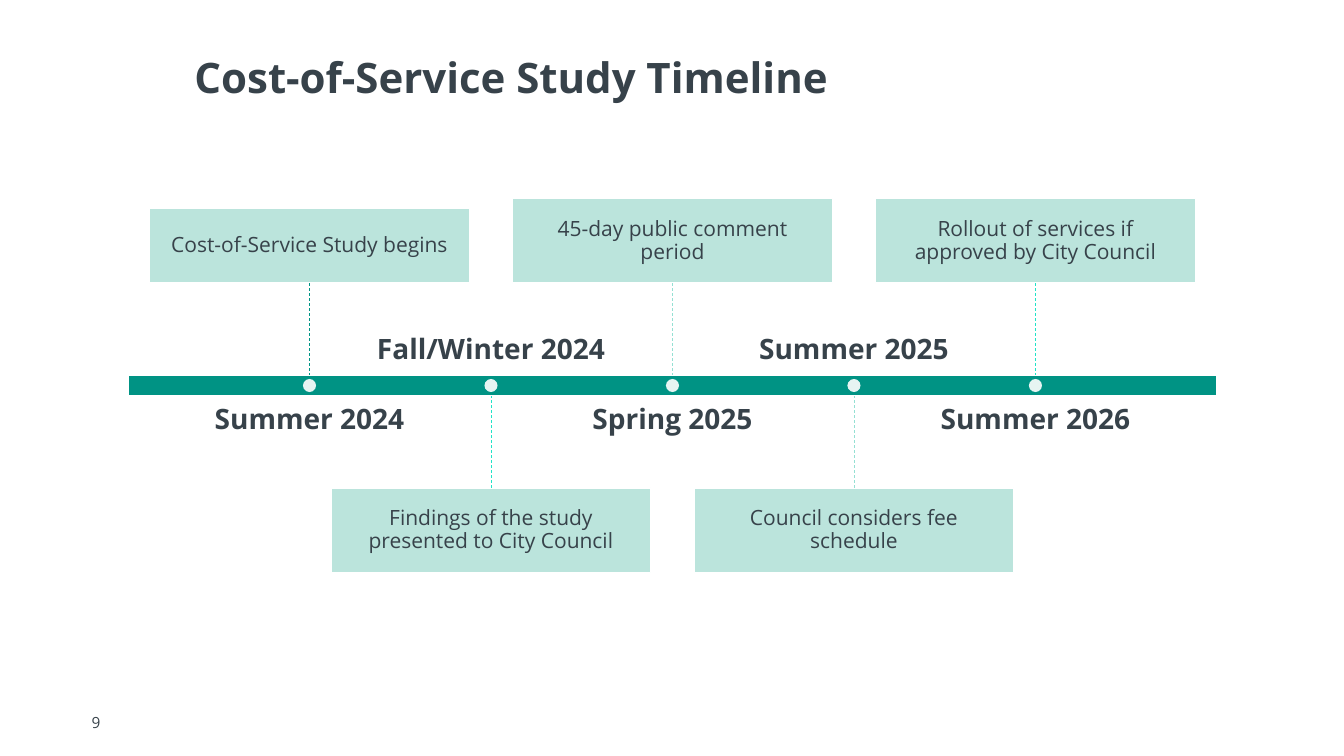
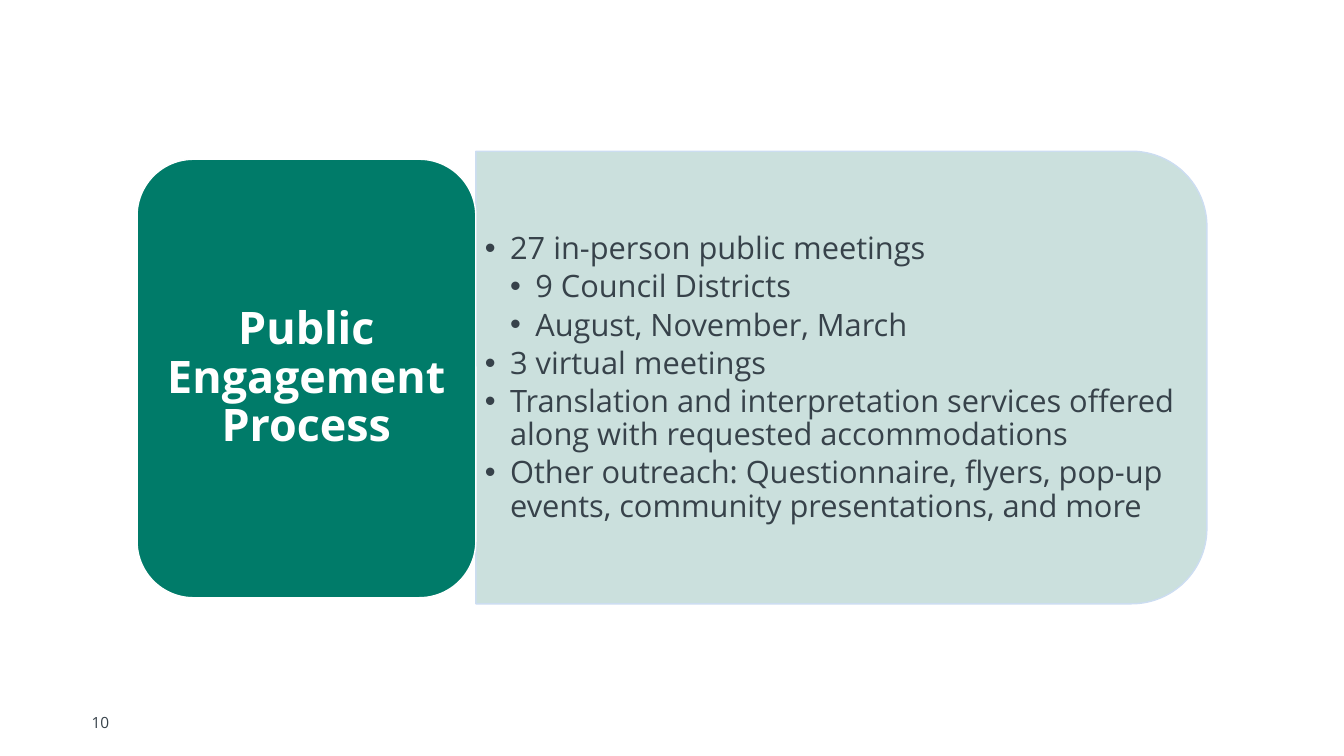
from dataclasses import dataclass
from typing import Any, Optional

from lxml import etree
from pptx import Presentation
from pptx.dml.color import RGBColor
from pptx.enum.dml import MSO_LINE
from pptx.enum.shapes import MSO_CONNECTOR, MSO_SHAPE
from pptx.enum.text import MSO_ANCHOR, PP_ALIGN
from pptx.oxml.ns import qn
from pptx.util import Inches, Pt

LEFT, CENTER = PP_ALIGN.LEFT, PP_ALIGN.CENTER
TOP, MIDDLE, BOTTOM = MSO_ANCHOR.TOP, MSO_ANCHOR.MIDDLE, MSO_ANCHOR.BOTTOM
RECTANGLE, OVAL = MSO_SHAPE.RECTANGLE, MSO_SHAPE.OVAL
ROUNDED, ROUND_TOP = MSO_SHAPE.ROUNDED_RECTANGLE, MSO_SHAPE.ROUND_2_SAME_RECTANGLE
STRAIGHT, DASH = MSO_CONNECTOR.STRAIGHT, MSO_LINE.DASH
TOP_SIDE, BOTTOM_SIDE = 0, 2


@dataclass(frozen=True)
class Theme:
    font: str = "Open Sans"
    ink: str = "37424A"
    white: str = "FFFFFF"
    bar: str = "009384"
    card: str = "B4E2D9"
    aqua: str = "21E3C7"
    pale_aqua: str = "95E0D3"
    heading: str = "007B69"
    panel: str = "CBE0DD"
    panel_edge: str = "CCDDF1"
    title_size: float = 30
    heading_size: float = 32
    bullet_size: float = 22
    date_size: float = 20
    card_size: float = 15
    number_size: float = 11
    line_spacing: float = 0.9
    opacity: int = 90


THEME = Theme()


@dataclass(frozen=True)
class Area:
    left: float
    top: float
    width: float
    height: float


@dataclass(frozen=True)
class TextStyle:
    size: float
    color: str = THEME.ink
    bold: bool = False
    align: PP_ALIGN = CENTER
    anchor: MSO_ANCHOR = MIDDLE
    inset_x: float = 0.1
    inset_y: float = 0.05
    space_after: float = 0
    line_spacing: float = THEME.line_spacing


@dataclass(frozen=True)
class Line:
    text: str
    bullet_level: Optional[int] = None


@dataclass(frozen=True)
class Milestone:
    date: str
    event: str
    stem_color: str
    card_height: float = 0.84


TITLE = TextStyle(THEME.title_size, bold=True, align=LEFT)
NUMBER = TextStyle(THEME.number_size, align=LEFT, line_spacing=1)
DATE_ABOVE = TextStyle(THEME.date_size, bold=True, anchor=BOTTOM, inset_x=0, inset_y=0)
DATE_BELOW = TextStyle(THEME.date_size, bold=True, anchor=TOP, inset_x=0, inset_y=0)
CARD = TextStyle(THEME.card_size, inset_x=0.16, inset_y=0.16)
HEADING = TextStyle(THEME.heading_size, THEME.white, bold=True, inset_x=0.12, inset_y=0.07)
BULLETS = TextStyle(THEME.bullet_size, align=LEFT, inset_x=0.09, space_after=3.5)

MILESTONES = [
    Milestone("Summer 2024", "Cost-of-Service Study begins", THEME.bar, 0.74),
    Milestone("Fall/Winter 2024", "Findings of the study presented to City Council", THEME.aqua),
    Milestone("Spring 2025", "45-day public comment period", THEME.pale_aqua),
    Milestone("Summer 2025", "Council considers fee schedule", THEME.pale_aqua),
    Milestone("Summer 2026", "Rollout of services if approved by City Council", THEME.aqua),
]
ENGAGEMENT = [
    Line("27 in-person public meetings", 0),
    Line("9 Council Districts", 1),
    Line("August, November, March", 1),
    Line("3 virtual meetings", 0),
    Line("Translation and interpretation services offered along with requested accommodations", 0),
    Line("Other outreach: Questionnaire, flyers, pop-up events, community presentations, and more", 0),
]

BAR = Area(1.27, 3.72, 10.8, 0.21)
FIRST_CENTER, STEP = 3.07, 1.8
CARD_WIDTH, UPPER_CARD_BOTTOM, LOWER_CARD_TOP = 3.17, 2.81, 4.84
DATE_WIDTH, DATE_HEIGHT, DATE_GAP = 2.88, 0.6, 0.09
DOT = 0.13
BULLET_INDENT = 0.25


def set_values(target: Any, values: dict[str, Any]) -> None:
    for name, value in values.items():
        setattr(target, name, value)


def placed(area: Area) -> list[int]:
    return [Inches(n) for n in (area.left, area.top, area.width, area.height)]


def add_bullet(para: Any, level: int) -> None:
    para.level = level
    properties = para._p.get_or_add_pPr()
    properties.set("marL", str(Inches(BULLET_INDENT * (level + 1))))
    properties.set("indent", str(-Inches(BULLET_INDENT)))
    font = etree.SubElement(properties, qn("a:buFont"))
    font.set("typeface", "Arial")
    etree.SubElement(properties, qn("a:buChar")).set("char", "•")


def write_text(shape: Any, lines: list[Line], style: TextStyle) -> None:
    frame = shape.text_frame
    set_values(frame, {
        "word_wrap": True,
        "vertical_anchor": style.anchor,
        "margin_left": Inches(style.inset_x),
        "margin_right": Inches(style.inset_x),
        "margin_top": Inches(style.inset_y),
        "margin_bottom": Inches(style.inset_y),
    })
    for index, line in enumerate(lines):
        para = frame.add_paragraph() if index else frame.paragraphs[0]
        if line.bullet_level is not None:
            add_bullet(para, line.bullet_level)
        set_values(para, {
            "alignment": style.align,
            "line_spacing": style.line_spacing,
            "space_before": Pt(0),
            "space_after": Pt(style.space_after),
        })
        span = para.add_run()
        span.text = line.text
        set_values(span.font, {"name": THEME.font, "size": Pt(style.size), "bold": style.bold})
        span.font.color.rgb = RGBColor.from_string(style.color)


def add_text(page: Any, area: Area, lines: list[Line], style: TextStyle) -> None:
    write_text(page.shapes.add_textbox(*placed(area)), lines, style)


def add_block(page: Any, kind: MSO_SHAPE, area: Area, fill: str,
              edge: Optional[str] = THEME.white, opacity: int = 100) -> Any:
    shape = page.shapes.add_shape(kind, *placed(area))
    shape.shadow.inherit = False
    shape.fill.solid()
    shape.fill.fore_color.rgb = RGBColor.from_string(fill)
    if opacity < 100:
        color = shape.element.spPr.find(f"{qn('a:solidFill')}/{qn('a:srgbClr')}")
        etree.SubElement(color, qn("a:alpha")).set("val", str(opacity * 1000))
    if edge is None:
        shape.line.fill.background()
    else:
        shape.line.color.rgb = RGBColor.from_string(edge)
        shape.line.width = Pt(1)
    return shape


def add_stem(page: Any, card: Any, side: int, x: float, bar_y: float, color: str) -> Any:
    """Draw a dashed line from a side of the card to the bar."""
    card_y = card.top + (card.height if side == BOTTOM_SIDE else 0)
    stem = page.shapes.add_connector(STRAIGHT, Inches(x), card_y, Inches(x), Inches(bar_y))
    stem.begin_connect(card, side)
    stem.line.color.rgb = RGBColor.from_string(color)
    set_values(stem.line, {"width": Pt(0.5), "dash_style": DASH})
    etree.SubElement(stem.element.spPr, qn("a:effectLst"))
    return stem


def add_milestone(page: Any, bar: Any, item: Milestone, index: int) -> None:
    x = FIRST_CENTER + STEP * index
    bar_bottom = BAR.top + BAR.height
    upper = index % 2 == 0
    if upper:
        card_top, side, bar_y = UPPER_CARD_BOTTOM - item.card_height, BOTTOM_SIDE, BAR.top
        date_top, date_style = bar_bottom + DATE_GAP, DATE_BELOW
    else:
        card_top, side, bar_y = LOWER_CARD_TOP, TOP_SIDE, bar_bottom
        date_top, date_style = BAR.top - DATE_GAP - DATE_HEIGHT, DATE_ABOVE

    card_area = Area(x - CARD_WIDTH / 2, card_top, CARD_WIDTH, item.card_height)
    card = add_block(page, RECTANGLE, card_area, THEME.card, opacity=THEME.opacity)
    write_text(card, [Line(item.event)], CARD)
    stem = add_stem(page, card, side, x, bar_y, item.stem_color)
    if index == len(MILESTONES) // 2:
        stem.end_connect(bar, TOP_SIDE)

    date_area = Area(x - DATE_WIDTH / 2, date_top, DATE_WIDTH, DATE_HEIGHT)
    add_text(page, date_area, [Line(item.date)], date_style)
    dot_area = Area(x - DOT / 2, BAR.top + (BAR.height - DOT) / 2, DOT, DOT)
    add_block(page, OVAL, dot_area, THEME.white, edge=None, opacity=THEME.opacity)


def add_page(deck: Any, number: int) -> Any:
    page = deck.slides.add_slide(deck.slide_layouts[6])
    add_text(page, Area(0.81, 6.97, 0.46, 0.4), [Line(str(number))], NUMBER)
    return page


def build_timeline(deck: Any) -> None:
    page = add_page(deck, 9)
    add_text(page, Area(1.83, 0.28, 11.5, 1.02), [Line("Cost-of-Service Study Timeline")], TITLE)
    bar = add_block(page, RECTANGLE, BAR, THEME.bar)
    for index, item in enumerate(MILESTONES):
        add_milestone(page, bar, item, index)


def build_engagement(deck: Any) -> None:
    page = add_page(deck, 10)
    panel = add_block(page, ROUND_TOP, Area(6.1, 0.12, 4.49, 7.25), THEME.panel, THEME.panel_edge)
    panel.rotation = 90
    add_text(page, Area(4.72, 1.73, 7.03, 4.05), ENGAGEMENT, BULLETS)
    heading = add_block(page, ROUNDED, Area(1.36, 1.58, 3.36, 4.35), THEME.heading)
    write_text(heading, [Line("Public Engagement Process")], HEADING)


def main() -> None:
    deck = Presentation()
    set_values(deck, {"slide_width": Inches(13.33), "slide_height": Inches(7.5)})
    build_timeline(deck)
    build_engagement(deck)
    deck.save("out.pptx")


if __name__ == "__main__":
    main()
